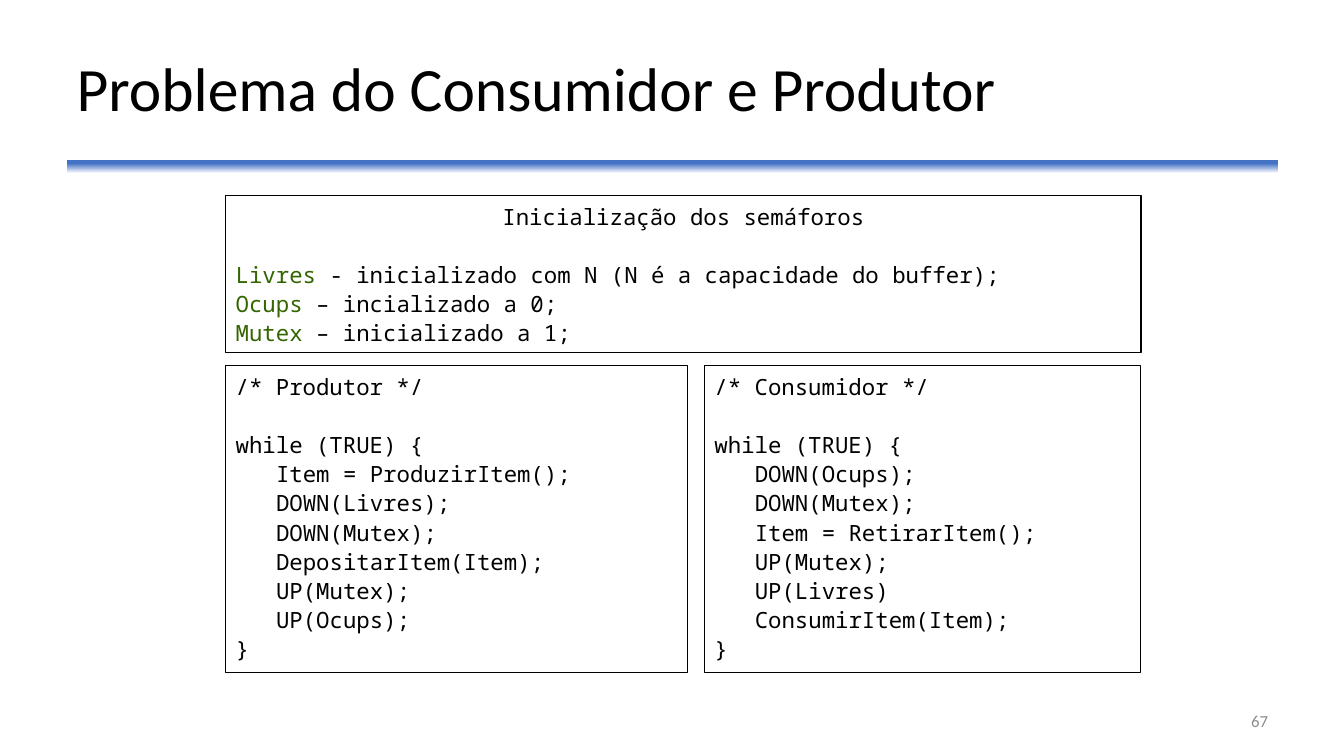
from dataclasses import dataclass

from pptx import Presentation
from pptx import util as u
from pptx.dml.color import RGBColor
from pptx.enum import shapes, text


@dataclass(frozen=True)
class Theme:
    black: str = "000000"
    blue: str = "4472C4"
    white: str = "FFFFFF"
    green: str = "336600"
    grey: str = "8C8C8C"
    sans: str = "Calibri"
    mono: str = "Noto Sans Mono"
    title_size: int = 44
    code_size: int = 16
    number_size: int = 12
    code_leading: float = 20.8
    code_indent: float = 28.8
    border: float = 0.75


class SlideBuilder:
    """Places elements on a grid of 80 columns by 45 rows."""

    COLS, ROWS = 80, 45
    CELL = u.Inches(1) // 6

    def __init__(self, prs, theme):
        prs.slide_width = self.CELL * self.COLS
        prs.slide_height = self.CELL * self.ROWS
        self.theme = theme
        self.s = prs.slides.add_slide(prs.slide_layouts[5])

    def grid(self, *cells):
        return [round(c * self.CELL) for c in cells]

    def run(self, p, words, name, size, color):
        r = p.add_run()
        r.text = words
        for key, value in {"name": name, "size": u.Pt(size)}.items():
            setattr(r.font, key, value)
        r.font.color.rgb = RGBColor.from_string(color)

    def frame(self, sp, anchor):
        tf = sp.text_frame
        settings = {"word_wrap": True, "vertical_anchor": anchor,
                    "auto_size": text.MSO_AUTO_SIZE.NONE}
        for key, value in settings.items():
            setattr(tf, key, value)
        return tf

    def rect(self, box):
        sp = self.s.shapes.add_shape(shapes.MSO_SHAPE.RECTANGLE, *self.grid(*box))
        sp.shadow.inherit = False
        return sp

    def title(self, box, words):
        sp = self.s.shapes.title
        for key, value in zip(("left", "top", "width", "height"), self.grid(*box)):
            setattr(sp, key, value)
        p = self.frame(sp, text.MSO_ANCHOR.MIDDLE).paragraphs[0]
        p.alignment = text.PP_ALIGN.LEFT
        p.line_spacing = 0.9
        t = self.theme
        self.run(p, words, t.sans, t.title_size, t.black)

    def gradient_bar(self, box):
        sp = self.rect(box)
        sp.line.fill.background()
        sp.fill.gradient()
        sp.fill.gradient_angle = 270
        stops = ((0.25, self.theme.blue), (1, self.theme.white))
        for stop, (position, color) in zip(sp.fill.gradient_stops, stops):
            stop.position = position
            stop.color.rgb = RGBColor.from_string(color)

    def code_box(self, box, heading, lines, heading_align=text.PP_ALIGN.LEFT):
        """Each line is (indent level, highlighted word, remaining text)."""
        t = self.theme
        sp = self.rect(box)
        sp.fill.background()
        sp.line.color.rgb = RGBColor.from_string(t.black)
        sp.line.width = u.Pt(t.border)
        tf = self.frame(sp, text.MSO_ANCHOR.TOP)
        for i, (level, term, rest) in enumerate([(0, "", heading), *lines]):
            p = tf.paragraphs[0] if i == 0 else tf.add_paragraph()
            p.alignment = heading_align if i == 0 else text.PP_ALIGN.LEFT
            p.line_spacing = u.Pt(t.code_leading)
            # One free line separates the heading from the body
            p.space_before = u.Pt(t.code_leading if i == 1 else 0)
            if level:
                p._p.get_or_add_pPr().set("marL", str(u.Pt(t.code_indent * level)))
            for words, color in ((term, t.green), (rest, t.black)):
                if words:
                    self.run(p, words, t.mono, t.code_size, color)

    def loop_box(self, box, heading, steps):
        body = [(1, "", step) for step in steps]
        self.code_box(box, heading, [(0, "", "while (TRUE) {"), *body, (0, "", "}")])

    def page_number(self, box, number):
        t = self.theme
        sp = self.s.shapes.add_textbox(*self.grid(*box))
        p = self.frame(sp, text.MSO_ANCHOR.MIDDLE).paragraphs[0]
        p.alignment = text.PP_ALIGN.RIGHT
        self.run(p, number, t.sans, t.number_size, t.grey)


def main():
    prs = Presentation()
    slide = SlideBuilder(prs, Theme())
    margin, content = 3.96, 72.12
    left, right = 13.44, 67.92
    loop_top, loop_height = 21.78, 18.24
    consumer_left = 41.94

    # Header
    slide.gradient_bar((margin, 9.54, content, 0.78))
    slide.title((margin, 1.5, content, 7.92), "Problema do Consumidor e Produtor")

    # Producer and consumer loops
    slide.loop_box((left, loop_top, 27.48, loop_height), "/* Produtor */", [
        "Item = ProduzirItem();", "DOWN(Livres);", "DOWN(Mutex);",
        "DepositarItem(Item);", "UP(Mutex);", "UP(Ocups);"])
    slide.loop_box((consumer_left, loop_top, right - consumer_left, loop_height),
                   "/* Consumidor */", [
        "DOWN(Ocups);", "DOWN(Mutex);", "Item = RetirarItem();",
        "UP(Mutex);", "UP(Livres)", "ConsumirItem(Item);"])

    # Semaphore initialisation
    slide.code_box((left, 11.64, right - left, 9.36), "Inicialização dos semáforos", [
        (0, "Livres", " - inicializado com N (N é a capacidade do buffer);"),
        (0, "Ocups", " – incializado a 0;"),
        (0, "Mutex", " – inicializado a 1;")], text.PP_ALIGN.CENTER)

    # Footer
    slide.page_number((56.52, 41.7, 19.56, 2.4), "67")
    prs.save("out.pptx")


if __name__ == "__main__":
    main()
